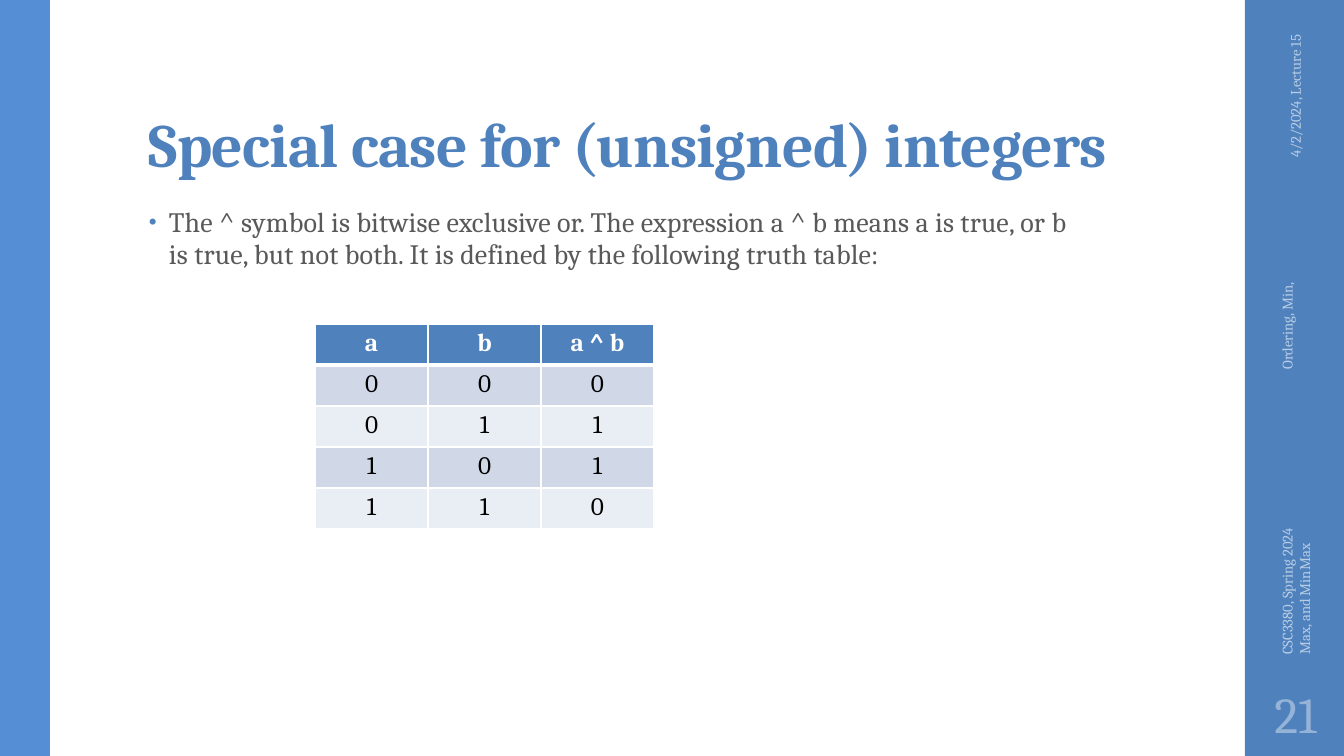
from lxml.etree import SubElement
from pptx import Presentation
from pptx.dml.color import RGBColor
from pptx.enum.shapes import MSO_SHAPE
from pptx.enum.text import MSO_ANCHOR, PP_ALIGN
from pptx.oxml import parse_xml
from pptx.oxml.ns import nsdecls, qn
from pptx.util import Pt

THEME = {
    "font": "Cambria",
    "blue": "4F81BD", "left_bar": "558ED5", "body": "595959",
    "footer": "B9CDE5", "number": "95B3D7",
    "white": "FFFFFF", "black": "000000", "bands": ("D0D8E8", "E9EDF4"),
    "title_size": 44, "body_size": 20, "footer_size": 10.5,
    "number_size": 36, "table_size": 18,
}

BARS = [((1245, 0, 99, 756), "blue"), ((0, 0, 50, 756), "left_bar")]

TEXTS = [
    {"text": "Special case for (unsigned) integers", "at": (139, 32, 1068, 154),
     "size": "title_size", "color": "blue", "bold": True, "spacing": -50,
     "frame": {"vertical_anchor": MSO_ANCHOR.BOTTOM, "margin_top": 3},
     "para": {"line_spacing": 0.9}},
    {"text": "The ^ symbol is bitwise exclusive or. The expression a ^ b means a is true, "
             "or b is true, but not both. It is defined by the following truth table:",
     "at": (139, 202, 948, 480), "size": "body_size", "color": "body",
     "spacing": 10, "bullet": "•",
     "para": {"line_spacing": 0.95, "space_before": Pt(14), "space_after": Pt(2)}},
    {"text": "4/2/2024, Lecture 15", "at": (1190, 110, 210, 40), "rotation": 270,
     "size": "footer_size", "color": "footer",
     "frame": {"vertical_anchor": MSO_ANCHOR.MIDDLE},
     "para": {"alignment": PP_ALIGN.RIGHT}},
    {"text": "CSC3380, Spring 2024\tOrdering, Min, Max, and MinMax",
     "at": (1098, 447, 395, 40), "rotation": 270, "tab": 285,
     "size": "footer_size", "color": "footer",
     "frame": {"vertical_anchor": MSO_ANCHOR.MIDDLE}},
    {"text": "21", "at": (1245, 680, 101, 66), "size": "number_size", "color": "number",
     "frame": {"vertical_anchor": MSO_ANCHOR.MIDDLE, "margin_left": 5, "margin_right": 5},
     "para": {"alignment": PP_ALIGN.CENTER}},
]

TRUTH_TABLE = [
    ("a", "b", "a ^ b"),
    ("0", "0", "0"),
    ("0", "1", "1"),
    ("1", "0", "1"),
    ("1", "1", "0"),
]
TABLE_LEFT, TABLE_TOP, COLUMN_WIDTH, ROW_HEIGHT = 315, 324, 113, 41
BULLET_INDENT = 20


def px(length):
    return round(length * 914400 / 100.8)


def apply(target, values):
    for name, value in values.items():
        setattr(target, name, value)


def style_span(span, size, color, bold=False):
    apply(span.font, {"name": THEME["font"], "size": Pt(THEME[size]), "bold": bold})
    span.font.color.rgb = RGBColor.from_string(THEME[color])


def add_bar(page, at, color):
    bar = page.shapes.add_shape(MSO_SHAPE.RECTANGLE, *map(px, at))
    bar.shadow.inherit = False
    bar.fill.solid()
    bar.fill.fore_color.rgb = RGBColor.from_string(THEME[color])
    bar.line.fill.background()


def add_bullet(para, mark):
    properties = para._p.get_or_add_pPr()
    properties.set("marL", str(px(BULLET_INDENT)))
    properties.set("indent", str(-px(BULLET_INDENT)))
    color = SubElement(properties, qn("a:buClr"))
    SubElement(color, qn("a:srgbClr"), val=THEME["blue"])
    SubElement(properties, qn("a:buSzPct"), val="80000")
    SubElement(properties, qn("a:buFont"), typeface="Arial")
    SubElement(properties, qn("a:buChar"), char=mark)


def add_tab_stop(para, position):
    stops = SubElement(para._p.get_or_add_pPr(), qn("a:tabLst"))
    SubElement(stops, qn("a:tab"), pos=str(px(position)), algn="l")


def add_text(page, item):
    box = page.shapes.add_textbox(*map(px, item["at"]))
    box.rotation = item.get("rotation", 0)
    frame = box.text_frame
    margins = {"margin_left": 10, "margin_right": 10, "margin_top": 5, "margin_bottom": 5}
    settings = {**margins, **item.get("frame", {})}
    apply(frame, {name: px(value) if name in margins else value
                  for name, value in settings.items()})
    frame.word_wrap = True
    para = frame.paragraphs[0]
    apply(para, item.get("para", {}))
    if "bullet" in item:
        add_bullet(para, item["bullet"])
    if "tab" in item:
        add_tab_stop(para, item["tab"])
    span = para.add_run()
    span.text = item["text"]
    style_span(span, item["size"], item["color"], item.get("bold", False))
    if "spacing" in item:
        span.font._element.set("spc", str(item["spacing"]))


def add_borders(cell, bottom_width):
    properties = cell._tc.get_or_add_tcPr()
    widths = {"lnL": 1, "lnR": 1, "lnT": 1, "lnB": bottom_width}
    for position, (side, width) in enumerate(widths.items()):
        properties.insert(position, parse_xml(
            f'<a:{side} {nsdecls("a")} w="{Pt(width)}"><a:solidFill>'
            f'<a:srgbClr val="{THEME["white"]}"/></a:solidFill></a:{side}>'))


def add_truth_table(page):
    rows, columns = len(TRUTH_TABLE), len(TRUTH_TABLE[0])
    size = (columns * COLUMN_WIDTH, rows * ROW_HEIGHT)
    table = page.shapes.add_table(
        rows, columns, *map(px, (TABLE_LEFT, TABLE_TOP, *size))).table
    for column in table.columns:
        column.width = px(COLUMN_WIDTH)
    for row_index, values in enumerate(TRUTH_TABLE):
        table.rows[row_index].height = px(ROW_HEIGHT)
        header = row_index == 0
        fill = THEME["blue"] if header else THEME["bands"][(row_index - 1) % 2]
        for column_index, value in enumerate(values):
            cell = table.cell(row_index, column_index)
            cell.fill.solid()
            cell.fill.fore_color.rgb = RGBColor.from_string(fill)
            add_borders(cell, 3 if header else 1)
            para = cell.text_frame.paragraphs[0]
            para.alignment = PP_ALIGN.CENTER
            span = para.add_run()
            span.text = value
            style_span(span, "table_size", "white" if header else "black", header)


def main():
    deck = Presentation()
    apply(deck, {"slide_width": px(1344), "slide_height": px(756)})
    page = deck.slides.add_slide(deck.slide_layouts[6])
    for at, color in BARS:
        add_bar(page, at, color)
    for item in TEXTS:
        add_text(page, item)
    add_truth_table(page)
    deck.save("out.pptx")


if __name__ == "__main__":
    main()
